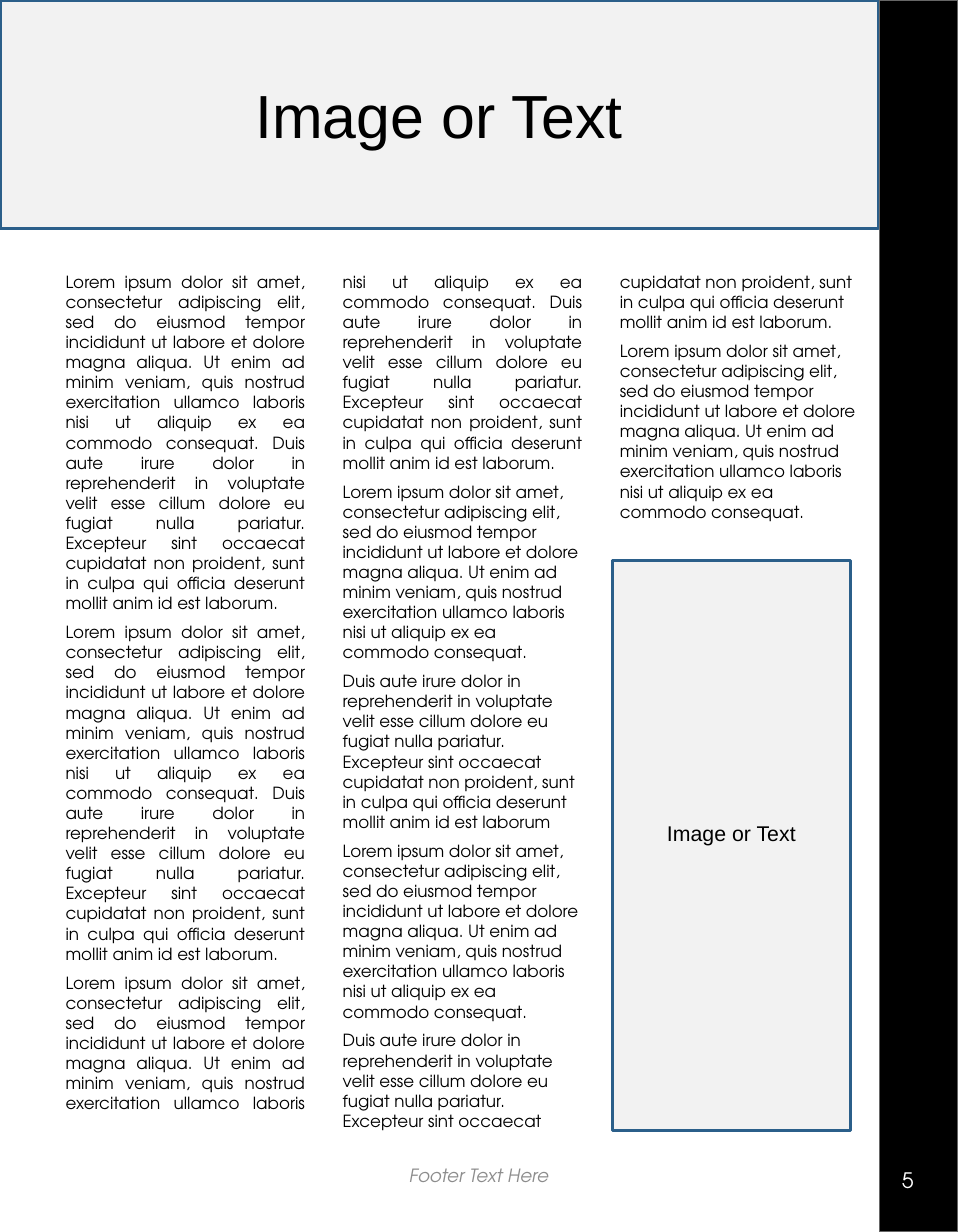
from dataclasses import dataclass

import pptx
import pptx.dml.color
import pptx.enum.shapes
import pptx.enum.text
import pptx.util
from pptx.shapes.autoshape import Shape
from pptx.slide import Slide
from pptx.text.text import TextFrame

PX = 9144  # EMU per px, 100 px to the inch
ALIGN = pptx.enum.text.PP_ALIGN
ANCHOR = pptx.enum.text.MSO_ANCHOR

COLORS = {
    "black": "000000",
    "white": "FFFFFF",
    "panel": "F2F2F2",
    "border": "2B5F8A",
    "bar_edge": "666666",
    "footer": "8C8C8C",
}
BODY_FONT = "TeX Gyre Adventor"
PANEL_FONT = "Arial"

OPENING = (
    "Lorem ipsum dolor sit amet, consectetur adipiscing elit, sed do eiusmod "
    "tempor incididunt ut labore et dolore magna aliqua. Ut enim ad minim veniam, "
    "quis nostrud exercitation ullamco laboris nisi ut aliquip ex ea commodo consequat."
)
CLOSING = (
    "Duis aute irure dolor in reprehenderit in voluptate velit esse cillum dolore eu "
    "fugiat nulla pariatur. Excepteur sint occaecat cupidatat non proident, sunt in "
    "culpa qui officia deserunt mollit anim id est laborum."
)


@dataclass(frozen=True)
class Box:
    left: int
    top: int
    width: int
    height: int

    def emu(self) -> tuple[int, int, int, int]:
        return (self.left * PX, self.top * PX, self.width * PX, self.height * PX)


@dataclass(frozen=True)
class TextStyle:
    font: str
    size: int
    color: str = "black"
    italic: bool = False
    align: ALIGN = ALIGN.LEFT


@dataclass(frozen=True)
class Label:
    box: Box
    text: str
    style: TextStyle
    anchor: ANCHOR


@dataclass(frozen=True)
class Article:
    text: str
    align: ALIGN


PAGE = Box(0, 0, 875, 1125)
SIDEBAR = Box(803, 0, 72, 1125)
BANNER = Box(0, 0, 802, 209)
SIDE_PANEL = Box(559, 512, 218, 520)
COLUMNS = Box(46, 238, 749, 805)

BODY_STYLE = TextStyle(BODY_FONT, 11)
ARTICLES = [Article(f"{OPENING} {CLOSING}", ALIGN.JUSTIFY)] * 3 + [
    Article(text, ALIGN.LEFT)
    for text in (OPENING, CLOSING.rstrip("."), OPENING, CLOSING, OPENING)
]
LABELS = [
    Label(Box(814, 1061, 44, 34), "5", TextStyle(BODY_FONT, 14, "white"), ANCHOR.TOP),
    Label(
        Box(290, 1043, 295, 60),
        "Footer Text Here",
        TextStyle(BODY_FONT, 12, "footer", True, ALIGN.CENTER),
        ANCHOR.MIDDLE,
    ),
]


def rgb(name: str) -> pptx.dml.color.RGBColor:
    return pptx.dml.color.RGBColor.from_string(COLORS[name])


def format_frame(frame: TextFrame, anchor: ANCHOR, **settings: int) -> None:
    values = {
        "word_wrap": True,
        "auto_size": pptx.enum.text.MSO_AUTO_SIZE.NONE,
        "vertical_anchor": anchor,
        **settings,
    }
    for name, value in values.items():
        setattr(frame, name, value)


def write(frame: TextFrame, index: int, text: str, style: TextStyle):
    paragraph = frame.paragraphs[0] if index == 0 else frame.add_paragraph()
    paragraph.alignment = style.align
    run = paragraph.add_run()
    run.text = text
    values = {
        "name": style.font,
        "size": pptx.util.Pt(style.size),
        "italic": style.italic,
    }
    for name, value in values.items():
        setattr(run.font, name, value)
    run.font.color.rgb = rgb(style.color)
    return paragraph


def paint(shape: Shape, fill: str, line: str, width: float) -> None:
    shape.fill.solid()
    shape.fill.fore_color.rgb = rgb(fill)
    shape.line.color.rgb = rgb(line)
    shape.line.width = pptx.util.Pt(width)
    shape.shadow.inherit = False


def add_rectangle(slide: Slide, box: Box) -> Shape:
    return slide.shapes.add_shape(
        pptx.enum.shapes.MSO_SHAPE.RECTANGLE, *box.emu()
    )


def fill_panel(shape: Shape, size: int, bottom: int = 5) -> None:
    paint(shape, "panel", "border", 2)
    format_frame(shape.text_frame, ANCHOR.MIDDLE, margin_bottom=bottom * PX)
    style = TextStyle(PANEL_FONT, size, align=ALIGN.CENTER)
    write(shape.text_frame, 0, "Image or Text", style)


def add_label(slide: Slide, label: Label) -> None:
    frame = slide.shapes.add_textbox(*label.box.emu()).text_frame
    format_frame(frame, label.anchor)
    write(frame, 0, label.text, label.style)


def add_columns(slide: Slide) -> None:
    frame = slide.shapes.add_textbox(*COLUMNS.emu()).text_frame
    margins = {f"margin_{side}": 10 * PX for side in ("left", "top", "right", "bottom")}
    format_frame(frame, ANCHOR.TOP, **margins)
    body = frame._txBody.bodyPr
    body.set("numCol", "3")
    body.set("spcCol", str(30 * PX))
    for index, article in enumerate(ARTICLES):
        style = TextStyle(BODY_STYLE.font, BODY_STYLE.size, align=article.align)
        paragraph = write(frame, index, article.text, style)
        paragraph._p.get_or_add_pPr().set("marL", str(4 * PX))
        if index:
            paragraph.space_before = pptx.util.Pt(5.8)


def main() -> None:
    presentation = pptx.Presentation()
    presentation.slide_width = PAGE.width * PX
    presentation.slide_height = PAGE.height * PX
    slide = presentation.slides.add_slide(presentation.slide_layouts[5])

    # Sidebar
    paint(add_rectangle(slide, SIDEBAR), "black", "bar_edge", 0.75)

    # Running text in three columns
    add_columns(slide)

    # Title banner and side panel
    banner = slide.shapes.title
    banner.left, banner.top, banner.width, banner.height = BANNER.emu()
    fill_panel(banner, 40)
    fill_panel(add_rectangle(slide, SIDE_PANEL), 14, bottom=27)

    # Page number and footer
    for label in LABELS:
        add_label(slide, label)

    presentation.save("out.pptx")


if __name__ == "__main__":
    main()
